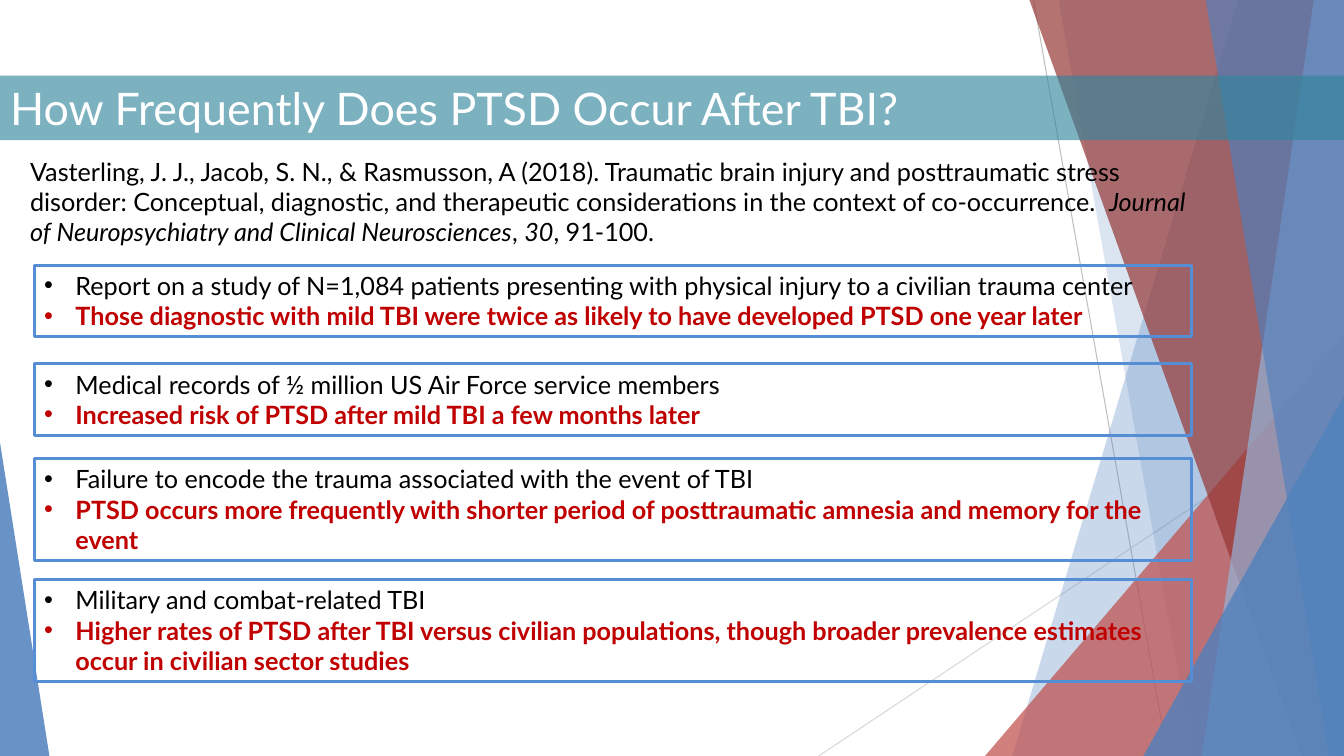
from lxml.etree import SubElement
from pptx import Presentation
from pptx.dml.color import RGBColor
from pptx.enum.shapes import MSO_CONNECTOR, MSO_SHAPE
from pptx.enum.text import MSO_ANCHOR, MSO_AUTO_SIZE, PP_ALIGN
from pptx.oxml.ns import qn
from pptx.util import Inches, Pt

BLACK = RGBColor(0x00, 0x00, 0x00)
WHITE = RGBColor(0xFF, 0xFF, 0xFF)
BLUE = RGBColor(0x4F, 0x81, 0xBD)
PALE_BLUE = RGBColor(0x95, 0xB3, 0xD7)
BORDER_BLUE = RGBColor(0x55, 0x8E, 0xD5)
TEAL = RGBColor(0x31, 0x85, 0x9C)
RED = RGBColor(0xC0, 0x50, 0x4D)
DARK_RED = RGBColor(0x95, 0x37, 0x35)
FINDING_RED = RGBColor(0xC0, 0x00, 0x00)
GREY = RGBColor(0xBF, 0xBF, 0xBF)
LIGHT_GREY = RGBColor(0xD9, 0xD9, 0xD9)
WIDTH, HEIGHT = 13.33, 7.5


def fill_translucent(shape, color, opacity):
    shape.fill.solid()
    shape.fill.fore_color.rgb = color
    srgb = shape.fill._xPr.find(qn("a:solidFill")).find(qn("a:srgbClr"))
    SubElement(srgb, qn("a:alpha"), val=str(opacity * 1000))
    shape.line.fill.background()


def style_text(paragraph, size, color, bold=False):
    paragraph.alignment = PP_ALIGN.LEFT
    paragraph.font.name = "Lato"
    paragraph.font.size = Pt(size)
    paragraph.font.color.rgb = color
    paragraph.font.bold = bold


deck = Presentation()
deck.slide_width = Inches(WIDTH)
deck.slide_height = Inches(HEIGHT)
slide = deck.slides.add_slide(deck.slide_layouts[5])
shapes = slide.shapes

for x1, y1, x2, y2, color in [
    (10.25, 0, 11.58, HEIGHT, GREY),
    (WIDTH, 4.03, 8.12, HEIGHT, LIGHT_GREY),
]:
    ray = shapes.add_connector(
        MSO_CONNECTOR.STRAIGHT, Inches(x1), Inches(y1), Inches(x2), Inches(y2)
    )
    ray.line.color.rgb = color
    ray.line.width = Pt(0.75)
    SubElement(ray.element.spPr, qn("a:effectLst"))

facets = [
    ("band", 12.28, 10.04, BLUE, 30),
    ("band", 10.5, 11.83, BLUE, 20),
    ("wedge", 9.77, 3.33, RED, 72),
    ("band", 10.21, 12.91, DARK_RED, 70),
    ("band", 13.03, 11.92, PALE_BLUE, 70),
    ("band", 11.96, 13.18, BLUE, 65),
    ("wedge", 11.34, 3.93, BLUE, 80),
]
for kind, first, second, color, opacity in facets:
    if kind == "band":
        outline = shapes.build_freeform(Inches(first), 0)
        outline.add_line_segments([
            (Inches(WIDTH), 0),
            (Inches(WIDTH), Inches(HEIGHT)),
            (Inches(second), Inches(HEIGHT)),
        ])
        facet = outline.convert_to_shape()
    else:
        facet = shapes.add_shape(
            MSO_SHAPE.ISOSCELES_TRIANGLE, Inches(first), Inches(second),
            Inches(WIDTH - first), Inches(HEIGHT - second),
        )
        facet.adjustments[0] = 1
    facet.shadow.inherit = False
    fill_translucent(facet, color, opacity)

left_wedge = shapes.add_shape(
    MSO_SHAPE.ISOSCELES_TRIANGLE, 0, Inches(4.39), Inches(0.49), Inches(3.11)
)
left_wedge.adjustments[0] = 0
left_wedge.shadow.inherit = False
fill_translucent(left_wedge, BLUE, 85)

title = shapes.title
title.element.getparent().append(title.element)
title.left, title.top = Inches(0), Inches(0.75)
title.width, title.height = Inches(WIDTH), Inches(0.64)
fill_translucent(title, TEAL, 63)
title.text_frame.text = "How Frequently Does PTSD Occur After TBI?"
title.text_frame.auto_size = MSO_AUTO_SIZE.NONE
title.text_frame.vertical_anchor = MSO_ANCHOR.TOP
style_text(title.text_frame.paragraphs[0], 32, WHITE)

citation = shapes.add_textbox(Inches(0.2), Inches(1.5), Inches(11.76), Inches(1.01))
citation.text_frame.word_wrap = True
reference = citation.text_frame.paragraphs[0]
style_text(reference, 18, BLACK)
for words, italic in [
    ("Vasterling, J. J., Jacob, S. N., & Rasmusson, A (2018). Traumatic brain injury "
     "and posttraumatic stress disorder: Conceptual, diagnostic, and therapeutic "
     "considerations in the context of co-occurrence.  ", False),
    ("Journal of Neuropsychiatry and Clinical Neurosciences", True),
    (", ", False),
    ("30", True),
    (", 91-100.", False),
]:
    run = reference.add_run()
    run.text = words
    run.font.italic = italic

studies = [
    (2.63, 0.71,
     "Report on a study of N=1,084 patients presenting with physical injury to a civilian trauma center",
     "Those diagnostic with mild TBI were twice as likely to have developed PTSD one year later"),
    (3.61, 0.71,
     "Medical records of ½ million US Air Force service members",
     "Increased risk of PTSD after mild TBI a few months later"),
    (4.55, 1.01,
     "Failure to encode the trauma associated with the event of TBI",
     "PTSD occurs more frequently with shorter period of posttraumatic amnesia and memory for the event"),
    (5.75, 1.01,
     "Military and combat-related TBI",
     "Higher rates of PTSD after TBI versus civilian populations, though broader prevalence "
     "estimates occur in civilian sector studies"),
]
for top, height, context, finding in studies:
    study = shapes.add_shape(
        MSO_SHAPE.RECTANGLE, Inches(0.34), Inches(top), Inches(11.48), Inches(height)
    )
    study.shadow.inherit = False
    study.fill.background()
    study.line.color.rgb = BORDER_BLUE
    study.line.width = Pt(2.25)
    frame = study.text_frame
    frame.word_wrap = True
    frame.vertical_anchor = MSO_ANCHOR.TOP
    frame.text = f"{context}\n{finding}"
    for paragraph, color, bold in zip(
        frame.paragraphs, (BLACK, FINDING_RED), (False, True)
    ):
        properties = paragraph._p.get_or_add_pPr()
        properties.set("marL", str(Inches(0.31)))
        properties.set("indent", str(Inches(-0.31)))
        SubElement(properties, qn("a:buFont"), typeface="Arial")
        SubElement(properties, qn("a:buChar"), char="•")
        style_text(paragraph, 18, color, bold)

deck.save("out.pptx")
